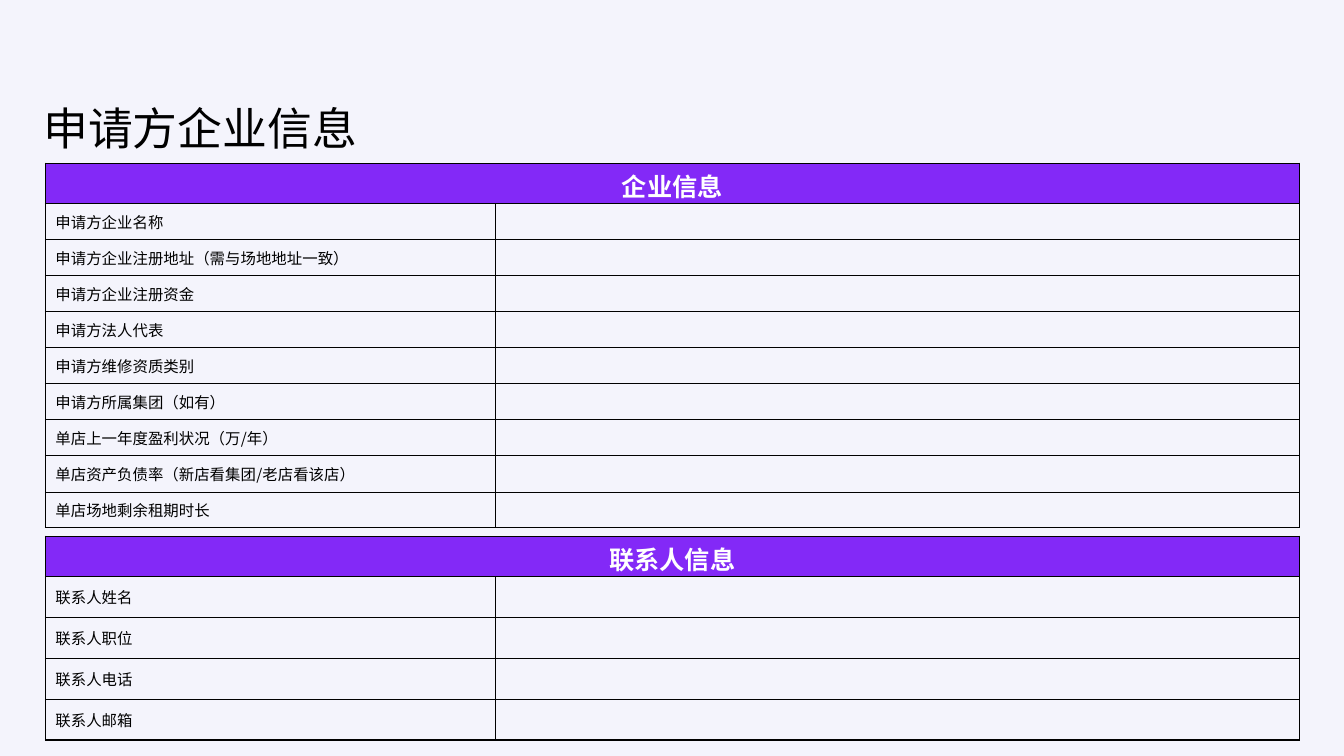
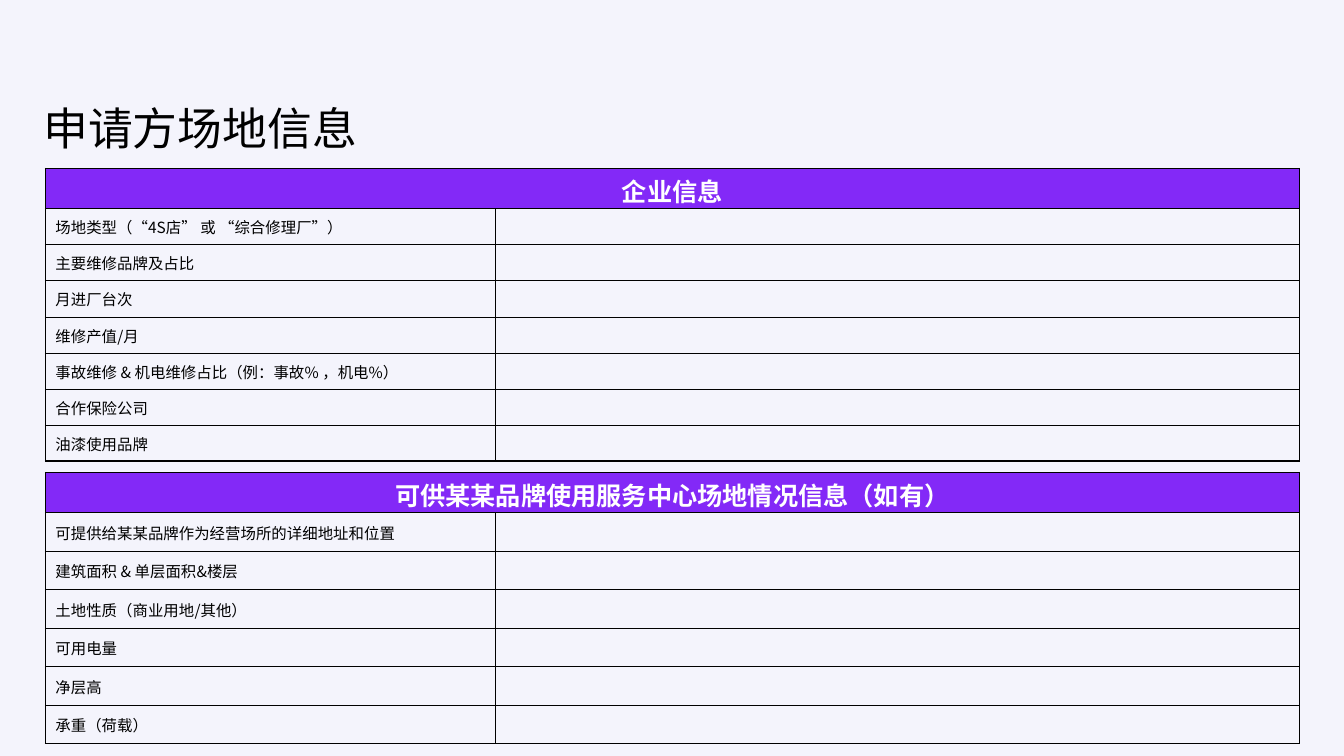
"""Build two application form slides with company, contact and site tables."""
import pptx
import pptx.dml.color
import pptx.enum.text
import pptx.oxml.ns
import pptx.util
from lxml import etree

Pt = pptx.util.Pt
qn = pptx.oxml.ns.qn
ALIGN = pptx.enum.text.PP_ALIGN
ANCHOR = pptx.enum.text.MSO_ANCHOR

COLORS = {"page": "F4F4FC", "band": "8329F7", "ink": "000000", "band_text": "FFFFFF"}
FONT = "Noto Sans CJK SC"
FORM_LEFT = 32.4
COLUMNS = (321.4, 574.3)
HEADER_HEIGHT = 28.8
OUTER_LINE, INNER_LINE = 1, 0.5

PAGES = [
    {"title": "申请方企业信息", "spacing": None, "forms": [
        {"heading": "企业信息", "top": 116.6, "row": 25.75, "fields": [
            "申请方企业名称",
            "申请方企业注册地址（需与场地地址一致）",
            "申请方企业注册资金",
            "申请方法人代表",
            "申请方维修资质类别",
            "申请方所属集团（如有）",
            "单店上一年度盈利状况（万/年）",
            "单店资产负债率（新店看集团/老店看该店）",
            "单店场地剩余租期时长",
        ]},
        {"heading": "联系人信息", "top": 383, "row": 29.2, "fields": [
            "联系人姓名",
            "联系人职位",
            "联系人电话",
            "联系人邮箱",
        ]},
    ]},
    {"title": "申请方场地信息", "spacing": 1.03, "forms": [
        {"heading": "企业信息", "top": 120.3, "row": 25.75, "fields": [
            "场地类型（“4S店” 或 “综合修理厂”）",
            "主要维修品牌及占比",
            "月进厂台次",
            "维修产值/月",
            "事故维修 & 机电维修占比（例：事故% ，机电%）",
            "合作保险公司",
            "油漆使用品牌",
        ]},
        {"heading": "可供某某品牌使用服务中心场地情况信息（如有）", "top": 337.4, "row": 27.5, "fields": [
            "可提供给某某品牌作为经营场所的详细地址和位置",
            "建筑面积 & 单层面积&楼层",
            "土地性质（商业用地/其他）",
            "可用电量",
            "净层高",
            "承重（荷载）",
        ]},
    ]},
]


def rgb(name):
    return pptx.dml.color.RGBColor.from_string(COLORS[name])


def write(frame, text, size=11, color="ink", bold=False, align=ALIGN.LEFT, spacing=None):
    paragraph = frame.paragraphs[0]
    paragraph.alignment = align
    if spacing:
        paragraph.line_spacing = spacing
    if not text:
        etree.SubElement(paragraph._p, qn("a:endParaRPr"), sz=str(size * 100))
        return
    run = paragraph.add_run()
    run.text = text
    run.font.size, run.font.bold, run.font.name = Pt(size), bold, FONT
    run.font.color.rgb = rgb(color)
    etree.SubElement(run._r.get_or_add_rPr(), qn("a:ea"), typeface=FONT)


def draw_borders(cell, widths):
    properties = cell._tc.get_or_add_tcPr()
    for position, (side, width) in enumerate(zip("LRTB", widths)):
        line = etree.Element(qn(f"a:ln{side}"), w=str(int(Pt(width))))
        fill = etree.SubElement(line, qn("a:solidFill"))
        etree.SubElement(fill, qn("a:srgbClr"), val=COLORS["ink"])
        properties.insert(position, line)


def add_title(slide, text):
    frame = slide.shapes.add_textbox(Pt(28.8), Pt(69.8), Pt(230.4), Pt(42.5)).text_frame
    frame.margin_left = frame.margin_right = Pt(2.2)
    frame.margin_top = frame.margin_bottom = Pt(2.2)
    frame.word_wrap = False
    frame.auto_size = pptx.enum.text.MSO_AUTO_SIZE.SHAPE_TO_FIT_TEXT
    write(frame, text, size=32)


def add_form(slide, heading, top, row, fields, spacing):
    heights = [HEADER_HEIGHT] + [row] * len(fields)
    form = slide.shapes.add_table(len(heights), len(COLUMNS), Pt(FORM_LEFT), Pt(top),
                                  Pt(sum(COLUMNS)), Pt(sum(heights))).table
    form.first_row = form.horz_banding = False
    for column, width in zip(form.columns, COLUMNS):
        column.width = Pt(width)
    last_row, last_column = len(heights) - 1, len(COLUMNS) - 1
    for r, (height, label) in enumerate(zip(heights, [heading] + fields)):
        form.rows[r].height = Pt(height)
        for c in range(len(COLUMNS)):
            cell = form.cell(r, c)
            cell.vertical_anchor = ANCHOR.MIDDLE
            cell.margin_top, cell.margin_bottom = Pt(2.5), Pt(0 if r == 0 else 2.5)
            if r == 0:
                cell.fill.solid()
                cell.fill.fore_color.rgb = rgb("band")
            else:
                cell.fill.background()
                write(cell.text_frame, "" if c else label, spacing=spacing)
            edges = (c == 0, c == last_column, r == 0, r == last_row)
            draw_borders(cell, [OUTER_LINE if edge else INNER_LINE for edge in edges])
    form.cell(0, 0).merge(form.cell(0, last_column))
    write(form.cell(0, 0).text_frame, heading, size=18, color="band_text",
          bold=True, align=ALIGN.CENTER)


def main():
    deck = pptx.Presentation()
    deck.slide_width, deck.slide_height = Pt(960), Pt(540)
    backdrop = deck.slide_master.background.fill
    backdrop.solid()
    backdrop.fore_color.rgb = rgb("page")
    for page in PAGES:
        slide = deck.slides.add_slide(deck.slide_layouts[6])
        add_title(slide, page["title"])
        for form in page["forms"]:
            add_form(slide, **form, spacing=page["spacing"])
    deck.save("out.pptx")


if __name__ == "__main__":
    main()
